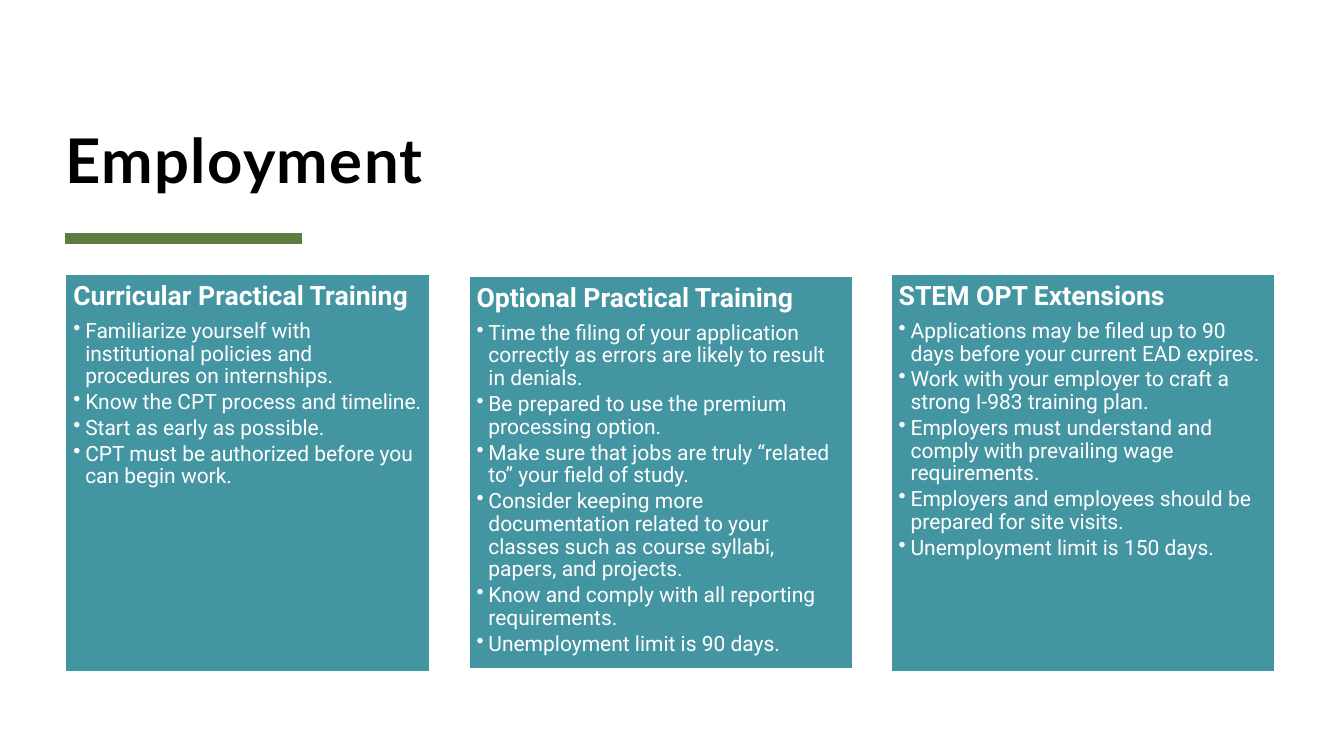
from lxml.etree import SubElement
from pptx import Presentation
from pptx.dml.color import RGBColor
from pptx.enum.shapes import MSO_CONNECTOR, MSO_SHAPE
from pptx.enum.text import MSO_ANCHOR, PP_ALIGN
from pptx.oxml.ns import qn
from pptx.util import Cm, Pt

BLACK = RGBColor(0x00, 0x00, 0x00)
WHITE = RGBColor(0xFF, 0xFF, 0xFF)
GREEN = RGBColor(0x5D, 0x7D, 0x40)
TEAL = RGBColor(0x44, 0x95, 0xA2)

LEFT = 1.65

# Left, top, width, height in cm, then heading and bullet points
PANELS = [
    (LEFT, 6.91, 9.19, 10.03, "Curricular Practical Training", [
        "Familiarize yourself with institutional policies and procedures on internships.",
        "Know the CPT process and timeline.",
        "Start as early as possible.",
        "CPT must be authorized before you can begin work.",
    ]),
    (11.81, 6.96, 9.68, 9.91, "Optional Practical Training", [
        "Time the filing of your application correctly as errors are likely to result in denials.",
        "Be prepared to use the premium processing option.",
        "Make sure that jobs are truly “related to” your field of study.",
        "Consider keeping more documentation related to your classes such as "
        "course syllabi, papers, and projects.",
        "Know and comply with all reporting requirements.",
        "Unemployment limit is 90 days.",
    ]),
    (22.45, 6.91, 9.68, 10.03, "STEM OPT Extensions", [
        "Applications may be filed up to 90 days before your current EAD expires.",
        "Work with your employer to craft a strong I-983 training plan.",
        "Employers must understand and comply with prevailing wage requirements.",
        "Employers and employees should be prepared for site visits.",
        "Unemployment limit is 150 days.",
    ]),
]


class SlideBuilder:
    title_font = "Lato"
    body_font = "Roboto"
    heading_size = 19
    bullet_size = 15
    panel_inset = 0.2
    bullet_indent = 0.3

    def __init__(self, slide):
        self.slide = slide

    def set_frame(self, frame, inset, anchor):
        frame.word_wrap = True
        frame.vertical_anchor = anchor
        frame.margin_left = frame.margin_right = Cm(inset)
        frame.margin_top = frame.margin_bottom = Cm(inset)

    def set_text(self, paragraph, text, font, size, color, bold, spacing):
        paragraph.text = text
        paragraph.alignment = PP_ALIGN.LEFT
        paragraph.line_spacing = spacing
        paragraph.font.name = font
        paragraph.font.size = Pt(size)
        paragraph.font.bold = bold
        paragraph.font.color.rgb = color

    def title(self, left, top, width, height, text):
        box = self.slide.shapes.add_textbox(Cm(left), Cm(top), Cm(width), Cm(height))
        self.set_frame(box.text_frame, 0, MSO_ANCHOR.BOTTOM)
        paragraph = box.text_frame.paragraphs[0]
        self.set_text(paragraph, text, self.title_font, 44, BLACK, True, 0.8)
        # Letter spacing of one point
        paragraph.runs[0]._r.get_or_add_rPr().set("spc", "100")

    def rule(self, left, right, y):
        line = self.slide.shapes.add_connector(
            MSO_CONNECTOR.STRAIGHT, Cm(left), Cm(y), Cm(right), Cm(y))
        line.line.color.rgb = GREEN
        line.line.width = Pt(8)
        SubElement(line._element.spPr, qn("a:effectLst"))

    def bullet(self, paragraph, text):
        self.set_text(paragraph, text, self.body_font, self.bullet_size, WHITE, False, 0.9)
        paragraph.space_after = Pt(0.15 * self.bullet_size)
        properties = paragraph._p.get_or_add_pPr()
        indent = Cm(self.bullet_indent)
        properties.set("marL", str(indent))
        properties.set("indent", str(-indent))
        character = properties.makeelement(qn("a:buChar"), {"char": "•"})
        properties.insert_element_before(
            character, "a:tabLst", "a:defRPr", "a:extLst")

    def panel(self, left, top, width, height, heading, points):
        shape = self.slide.shapes.add_shape(
            MSO_SHAPE.RECTANGLE, Cm(left), Cm(top), Cm(width), Cm(height))
        shape.shadow.inherit = False
        shape.fill.solid()
        shape.fill.fore_color.rgb = TEAL
        shape.line.color.rgb = WHITE
        shape.line.width = Pt(1.5)
        frame = shape.text_frame
        self.set_frame(frame, self.panel_inset, MSO_ANCHOR.TOP)
        paragraph = frame.paragraphs[0]
        self.set_text(paragraph, heading, self.body_font, self.heading_size, WHITE, True, 0.9)
        paragraph.space_after = Pt(0.35 * self.heading_size)
        for point in points:
            self.bullet(frame.add_paragraph(), point)


def main():
    presentation = Presentation()
    presentation.slide_width = Cm(33.87)
    presentation.slide_height = Cm(19.05)
    builder = SlideBuilder(presentation.slides.add_slide(presentation.slide_layouts[6]))

    # Title and green rule
    builder.title(LEFT, 0.56, 30.48, 4.37, "Employment")
    builder.rule(LEFT, 7.6, 6)

    # Three training panels
    for panel in PANELS:
        builder.panel(*panel)

    presentation.save("out.pptx")


if __name__ == "__main__":
    main()
